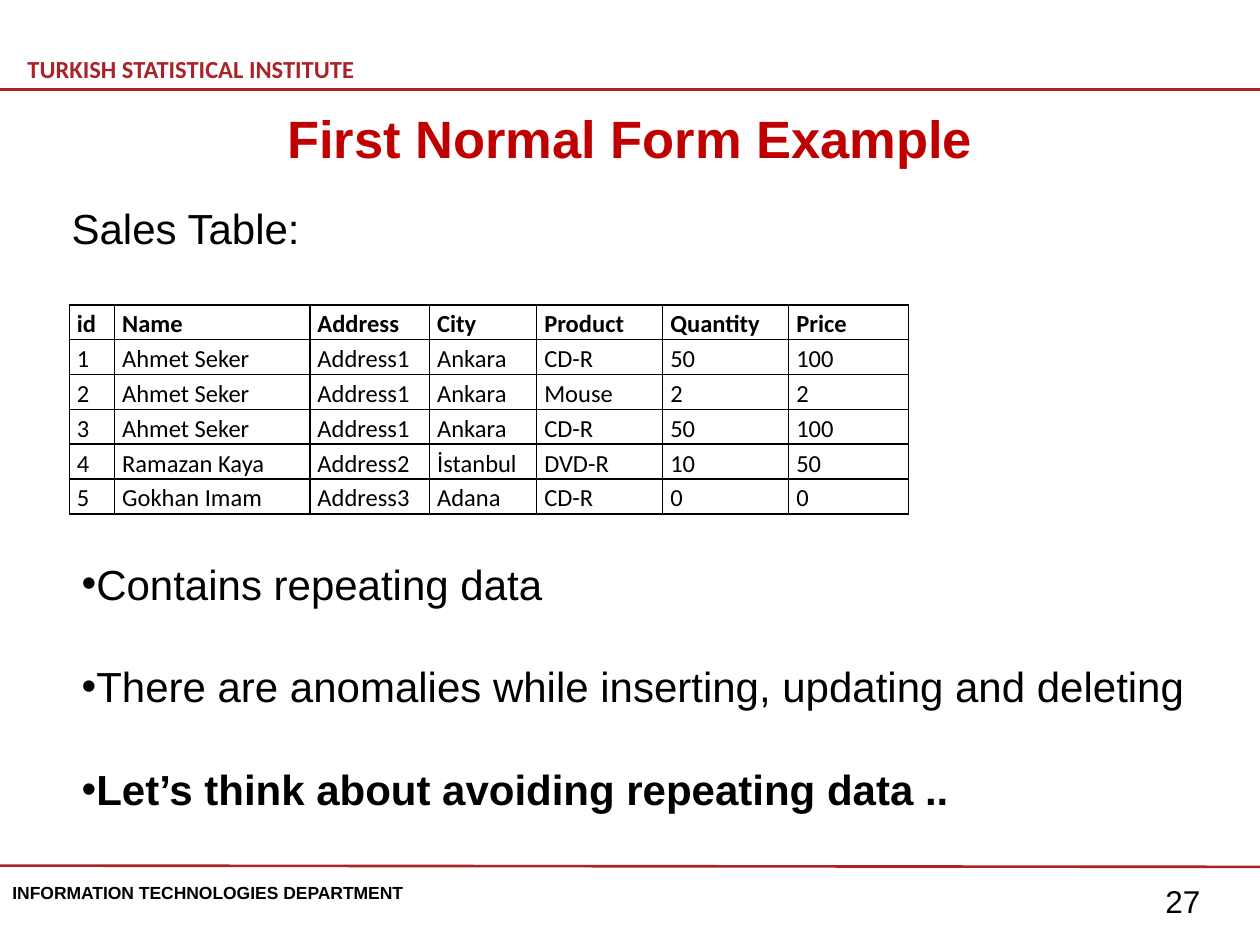
from collections import namedtuple

from lxml.etree import SubElement
from pptx import Presentation
from pptx.dml.color import RGBColor
from pptx.enum.shapes import MSO_CONNECTOR
from pptx.enum.text import MSO_ANCHOR, MSO_AUTO_SIZE, PP_ALIGN
from pptx.oxml.ns import qn
from pptx.util import Inches, Pt

BLACK = RGBColor(0x00, 0x00, 0x00)
BRICK = RGBColor(0xAB, 0x23, 0x28)
RED = RGBColor(0xC0, 0x00, 0x00)

GRID_UNIT = Inches(0.1)
COLUMN_WIDTHS = (3.6, 15.5, 9.5, 8.5, 10, 10, 9.5)
SALES = (
    ("id", "Name", "Address", "City", "Product", "Quantity", "Price"),
    ("1", "Ahmet Seker", "Address1", "Ankara", "CD-R", "50", "100"),
    ("2", "Ahmet Seker", "Address1", "Ankara", "Mouse", "2", "2"),
    ("3", "Ahmet Seker", "Address1", "Ankara", "CD-R", "50", "100"),
    ("4", "Ramazan Kaya", "Address2", "İstanbul", "DVD-R", "10", "50"),
    ("5", "Gokhan Imam", "Address3", "Adana", "CD-R", "0", "0"),
)
FINDINGS = (
    ("Contains repeating data", False),
    ("There are anomalies while inserting, updating and deleting", False),
    ("Let’s think about avoiding repeating data ..", True),
)

Box = namedtuple("Box", "left top width height")


def grid_box(column, row, columns, rows):
    """Return a box measured in units of the slide's 100 by 75 grid."""
    return Box(*(round(GRID_UNIT * units) for units in (column, row, columns, rows)))


def add_run(paragraph, text, size, bold=False, color=BLACK, font_name="Arial"):
    """Append one formatted run to a paragraph."""
    run = paragraph.add_run()
    run.text = text
    run.font.name = font_name
    run.font.size = Pt(size)
    run.font.bold = bold
    run.font.color.rgb = color


def add_text_frame(slide, box, wrap=True):
    """Add a text box and return its text frame."""
    text_frame = slide.shapes.add_textbox(*box).text_frame
    text_frame.word_wrap = wrap
    return text_frame


def add_label(slide, box, text, size, wrap=True, **style):
    """Add a text box that holds one line of text."""
    text_frame = add_text_frame(slide, box, wrap)
    add_run(text_frame.paragraphs[0], text, size, **style)
    return text_frame


def add_rule(slide, box):
    """Draw a brick-red line across a box."""
    line = slide.shapes.add_connector(
        MSO_CONNECTOR.STRAIGHT,
        box.left, box.top, box.left + box.width, box.top + box.height,
    )
    line.line.color.rgb = BRICK
    line.line.width = Pt(1.5)
    SubElement(line._element.spPr, qn("a:effectLst"))


def add_header(slide, box):
    """Place the institute name above the upper rule."""
    text_frame = add_label(
        slide, box, "TURKISH STATISTICAL INSTITUTE", 14,
        bold=True, color=BRICK, font_name="Calibri",
    )
    text_frame.vertical_anchor = MSO_ANCHOR.MIDDLE


def add_footer(slide, box):
    """Place the department name and the page number in a footer band."""
    department = Box(box.left, box.top, round(box.width * 0.34), round(box.height * 0.68))
    number_width = round(box.width * 0.07)
    number_left = box.left + box.width - number_width
    number = Box(number_left, box.top, number_width, box.height)
    add_label(slide, department, "INFORMATION TECHNOLOGIES DEPARTMENT", 10, wrap=False, bold=True)
    add_label(slide, number, "27", 18)


def fill_title(slide, box):
    """Move the title placeholder into a box and write the title."""
    title = slide.shapes.title
    title.left, title.top, title.width, title.height = box
    text_frame = title.text_frame
    text_frame.auto_size = MSO_AUTO_SIZE.NONE
    text_frame.vertical_anchor = MSO_ANCHOR.MIDDLE
    paragraph = text_frame.paragraphs[0]
    paragraph.alignment = PP_ALIGN.CENTER
    add_run(paragraph, "First Normal Form Example", 30, bold=True, color=RED)


def add_borders(cell):
    """Draw black borders on the four sides of a cell."""
    properties = cell._tc.get_or_add_tcPr()
    for position, side in enumerate(("a:lnL", "a:lnR", "a:lnT", "a:lnB")):
        border = properties.makeelement(qn(side), {"w": str(Pt(1))})
        fill = SubElement(border, qn("a:solidFill"))
        SubElement(fill, qn("a:srgbClr"), val=str(BLACK))
        properties.insert(position, border)


def add_sales_table(slide, box):
    """Fill a box with the bordered sales table."""
    table = slide.shapes.add_table(len(SALES), len(COLUMN_WIDTHS), *box).table
    table.horz_banding = False
    for column, share in zip(table.columns, COLUMN_WIDTHS):
        column.width = round(box.width * share / sum(COLUMN_WIDTHS))
    for row_index, values in enumerate(SALES):
        table.rows[row_index].height = box.height // len(SALES)
        for column_index, value in enumerate(values):
            cell = table.cell(row_index, column_index)
            cell.fill.background()
            cell.margin_left = cell.margin_right = Inches(0.06)
            cell.margin_top = cell.margin_bottom = 0
            paragraph = cell.text_frame.paragraphs[0]
            paragraph.line_spacing = 1.15
            add_run(paragraph, value, 14, bold=row_index == 0, font_name="Calibri")
            add_borders(cell)


def add_findings(slide, box):
    """Place the bulleted findings, spaced apart, in a box."""
    text_frame = add_text_frame(slide, box, wrap=False)
    for index, (text, bold) in enumerate(FINDINGS):
        paragraph = text_frame.add_paragraph() if index else text_frame.paragraphs[0]
        properties = paragraph._p.get_or_add_pPr()
        SubElement(properties, qn("a:buFont"), typeface="Arial")
        SubElement(properties, qn("a:buChar"), char="•")
        if index:
            paragraph.space_before = Pt(30)
        add_run(paragraph, text, 24, bold=bold)


def main():
    """Build the slide and save the presentation."""
    presentation = Presentation()
    presentation.slide_width = GRID_UNIT * 100
    presentation.slide_height = GRID_UNIT * 75
    slide = presentation.slides.add_slide(presentation.slide_layouts.get_by_name("Title Only"))
    add_header(slide, grid_box(1.2, 3.5, 35.4, 3.9))
    add_rule(slide, grid_box(0, 7.1, 100, 0))
    add_rule(slide, grid_box(0, 68.7, 100, 0.1))
    add_footer(slide, grid_box(0, 69.5, 98.4, 4))
    fill_title(slide, grid_box(5, 7.8, 90, 6.3))
    add_label(slide, grid_box(4.7, 15.6, 20.3, 5), "Sales Table:", 24, wrap=False)
    add_sales_table(slide, grid_box(5.5, 24.2, 66.6, 16.6))
    add_findings(slide, grid_box(5.5, 43.8, 91.4, 21.2))
    presentation.save("out.pptx")


if __name__ == "__main__":
    main()
